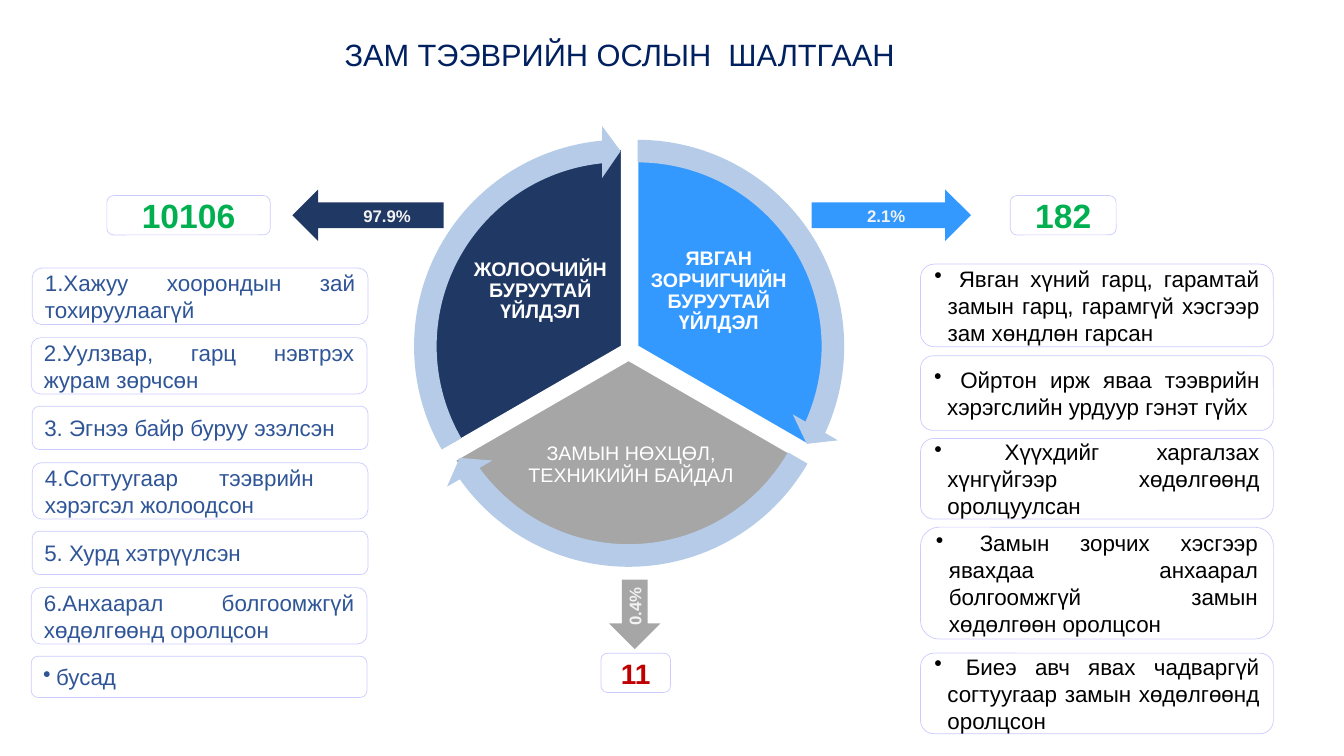
"""Build a slide on the causes of road accidents."""
import pptx
import pptx.util
import pptx.dml.color
import pptx.enum.shapes
import pptx.enum.text
import lxml.etree

Inches = pptx.util.Inches
Pt = pptx.util.Pt
Kind = pptx.enum.shapes.MSO_SHAPE
Align = pptx.enum.text.PP_ALIGN
Anchor = pptx.enum.text.MSO_ANCHOR
HUES = {
    "title": "002060", "navy": "203864", "blue": "3399FF", "gray": "A6A6A6",
    "ring": "B5CBE7", "edge": "CCCCFF", "white": "FFFFFF", "pale": "F2F2F2",
    "green": "00B050", "red": "C00000", "ink": "2F5597", "black": "000000",
}

deck = pptx.Presentation()
deck.slide_width, deck.slide_height = Inches(13.33), Inches(7.5)
slide = deck.slides.add_slide(deck.slide_layouts[6])


def write(text, at, box=None, size=16, hue="white", bold=False, align=Align.CENTER,
          space=None, inset=None, bullet=False, turn=0, anchor=Anchor.MIDDLE):
    """Write text into a given shape, or into a new text box."""
    if box is None:
        box = slide.shapes.add_textbox(*map(Inches, at))
    box.rotation = turn
    frame = box.text_frame
    frame.word_wrap = True
    frame.vertical_anchor = anchor
    if inset is not None:
        frame.margin_left = frame.margin_right = Inches(inset)
        frame.margin_top = frame.margin_bottom = Inches(inset)
    para = frame.paragraphs[0]
    para.alignment = align
    if space:
        para.line_spacing = space
    if bullet:
        props = para._p.get_or_add_pPr()
        props.set("marL", str(Inches(0.13)))
        props.set("indent", str(Inches(-0.13)))
        tag = "{http://schemas.openxmlformats.org/drawingml/2006/main}buChar"
        lxml.etree.SubElement(props, tag).set("char", "•")
    run = para.add_run()
    run.text = text
    run.font.name, run.font.size, run.font.bold = "Arial", Pt(size), bold
    run.font.color.rgb = pptx.dml.color.RGBColor.from_string(HUES[hue])


def draw(kind, at, fill, line=None, width=1, turn=0, adjust=()):
    """Add a flat preset shape."""
    shape = slide.shapes.add_shape(kind, *map(Inches, at))
    shape.shadow.inherit = False
    shape.rotation = turn
    shape.fill.solid()
    shape.fill.fore_color.rgb = pptx.dml.color.RGBColor.from_string(HUES[fill])
    if line:
        shape.line.color.rgb = pptx.dml.color.RGBColor.from_string(HUES[line])
        shape.line.width = Pt(width)
    else:
        shape.line.fill.background()
    for i, value in enumerate(adjust):
        shape.adjustments[i] = value
    return shape


write("ЗАМ ТЭЭВРИЙН ОСЛЫН  ШАЛТГААН", (2.19, 0.27, 7.91, 0.59),
      size=22, hue="title", space=0.9)

parts = [
    ((4.37, 1.48, 3.91, 3.91), (162, 18), "blue",
     "ЯВГАН ЗОРЧИГЧИЙН БУРУУТАЙ ҮЙЛДЭЛ", (6.43, 2.31, 1.4, 1.16), True),
    ((4.2, 1.72, 4.07, 3.71), (18, 90), "gray",
     "ЗАМЫН НӨХЦӨЛ, ТЕХНИКИЙН БАЙДАЛ", (5.17, 4.13, 2.18, 0.97), False),
    ((4.21, 1.48, 3.91, 3.91), (90, 162), "navy",
     "ЖОЛООЧИЙН БУРУУТАЙ ҮЙЛДЭЛ", (4.66, 2.31, 1.4, 1.16), True),
]
for at, angles, hue, text, spot, bold in parts:
    draw(Kind.PIE, at, hue, "white", adjust=angles)
    write(text, spot, size=14, bold=bold, space=0.9, inset=0.02)

for left, top, end, start in [(4.13, 1.24, 14.725, 161.994),
                              (4.04, 1.38, 86.72, 18.005),
                              (3.96, 1.24, 158.73, 90)]:
    draw(Kind.CIRCULAR_ARROW, (left, top, 4.39, 4.39), "ring",
         adjust=(0.051, 3.275, end, start, 0.059))

counts = [
    ("10106", (1.06, 1.94, 1.62, 0.39), 24, "green"),
    ("11", (5.96, 6.48, 0.69, 0.39), 20, "red"),
    ("182", (10.02, 1.94, 1.05, 0.39), 24, "green"),
]
for text, at, size, hue in counts:
    box = draw(Kind.ROUNDED_RECTANGLE, at, "white", "edge", 0.5)
    write(text, at, box, size=size, hue=hue, bold=True)

shares = [
    ("0.4%", (5.95, 5.84, 0.69, 0.51), 90, "gray", (5.98, 5.87, 0.63, 0.3), 270),
    ("97.9%", (2.9, 1.88, 1.5, 0.51), 180, "navy", (3.46, 1.99, 0.76, 0.3), 0),
    ("2.1%", (8.05, 1.88, 1.58, 0.51), 0, "blue", (8.41, 1.99, 0.76, 0.3), 0),
]
for text, at, turn, hue, spot, tilt in shares:
    draw(Kind.RIGHT_ARROW, at, hue, turn=turn)
    write(text, spot, size=12, hue="pale", bold=True, turn=tilt, anchor=Anchor.TOP)

drivers = [
    ("1.Хажуу хоорондын зай тохируулаагүй", 0.32, 2.66, 0.56),
    ("2.Уулзвар, гарц нэвтрэх журам зөрчсөн", 0.31, 3.35, 0.56),
    ("3. Эгнээ байр буруу эзэлсэн", 0.32, 4.03, 0.43),
    ("4.Согтуугаар тээврийн  хэрэгсэл жолоодсон", 0.32, 4.59, 0.56),
    ("5. Хурд хэтрүүлсэн", 0.32, 5.27, 0.43),
    ("6.Анхаарал болгоомжгүй хөдөлгөөнд оролцсон", 0.31, 5.83, 0.56),
    ("бусад", 0.31, 6.51, 0.41),
]
walkers = [
    (" Явган хүний гарц, гарамтай замын гарц, гарамгүй хэсгээр зам хөндлөн гарсан",
     9.13, 2.62, 0.82),
    (" Ойртон ирж яваа тээврийн хэрэгслийн урдуур гэнэт гүйх", 9.13, 3.53, 0.74),
    (" Хүүхдийг харгалзах хүнгүйгээр хөдөлгөөнд оролцуулсан", 9.13, 4.35, 0.8),
    (" Замын зорчих хэсгээр явахдаа анхаарал болгоомжгүй замын хөдөлгөөн оролцсон",
     9.13, 5.23, 1.11),
    (" Биеэ авч явах чадваргүй согтуугаар замын хөдөлгөөнд оролцсон",
     9.13, 6.48, 0.8),
]
for items, width, hue in [(drivers, 3.33, "ink"), (walkers, 3.5, "black")]:
    for text, left, top, height in items:
        at = (left, top, width, height)
        box = draw(Kind.ROUNDED_RECTANGLE, at, "white", "edge", 0.5)
        write(text, at, box, hue=hue, align=Align.JUSTIFY,
              bullet=items is walkers or text == "бусад")

deck.save("out.pptx")
